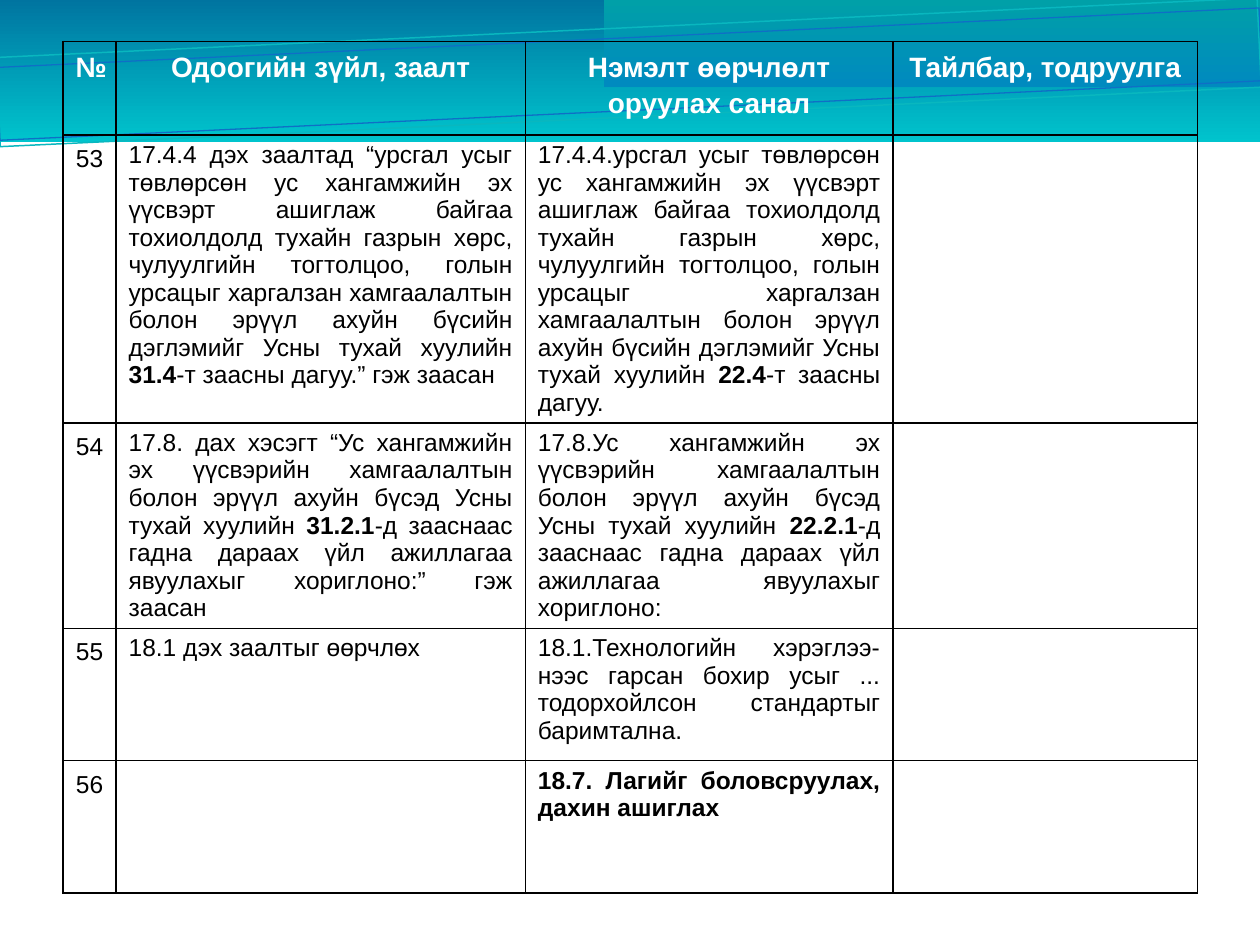
from lxml import etree
from pptx import Presentation
from pptx.dml.color import RGBColor
from pptx.enum import shapes, text
from pptx.oxml import ns
from pptx.util import Cm, Pt

COLORS = {
    "white": "FFFFFF", "black": "000000",
    "band_top": "0074A0", "band_bottom": "00C4CD",
    "panel_bottom": "008ABF", "panel_top": "00A0A8",
    "teal_line": "09B7BF", "blue_line": "0F6FC6",
}
FONT = "Arial"
CENTER, JUSTIFY = text.PP_ALIGN.CENTER, text.PP_ALIGN.JUSTIFY


def color(name):
    return RGBColor.from_string(COLORS[name])


def draw_borders(cell):
    """Add a thin black line on every side of a table cell."""
    properties = cell._tc.get_or_add_tcPr()
    for side in ("a:lnL", "a:lnR", "a:lnT", "a:lnB"):
        line = etree.SubElement(properties, ns.qn(side), w=str(Pt(1)))
        fill = etree.SubElement(line, ns.qn("a:solidFill"))
        etree.SubElement(fill, ns.qn("a:srgbClr"), val=COLORS["black"])


presentation = Presentation()
presentation.slide_width, presentation.slide_height = Cm(25.4), Cm(19.05)
slide = presentation.slides.add_slide(presentation.slide_layouts[6])

# Gradient bands: left, top, width, height, first colour, last colour, angle
bands = [
    (-0.03, -0.03, 25.45, 2.9, "band_top", "band_bottom", 270),
    (12.17, -0.03, 13.23, 1.78, "panel_bottom", "panel_top", 90),
]
for *box, first, last, angle in bands:
    shape = slide.shapes.add_shape(shapes.MSO_SHAPE.RECTANGLE, *map(Cm, box))
    shape.shadow.inherit = False
    shape.line.fill.background()
    shape.fill.gradient()
    shape.fill.gradient_angle = angle
    for stop, name, position in zip(shape.fill.gradient_stops, (first, last), (0, 1)):
        stop.color.rgb = color(name)
        stop.position = position

# Tilted outlines: left, top, width, height, line colour, line width
outlines = [
    (-0.05, 0.56, 25.45, 1.8, "teal_line", 0.85),
    (-0.05, 0.76, 25.48, 1.47, "blue_line", 0.75),
]
for *box, name, width in outlines:
    shape = slide.shapes.add_shape(shapes.MSO_SHAPE.RECTANGLE, *map(Cm, box))
    shape.shadow.inherit = False
    shape.rotation = 357.3
    shape.fill.background()
    shape.line.color.rgb = color(name)
    shape.line.width = Pt(width)

# Each cell is a list of runs; every second run is bold
rows = [
    [["№"], ["Одоогийн зүйл, заалт"], ["Нэмэлт өөрчлөлт оруулах санал"], ["Тайлбар, тодруулга"]],
    [
        ["53"],
        ["17.4.4 дэх заалтад “урсгал усыг төвлөрсөн ус хангамжийн эх үүсвэрт ашиглаж байгаа "
         "тохиолдолд тухайн газрын хөрс, чулуулгийн тогтолцоо, голын урсацыг харгалзан "
         "хамгаалалтын болон эрүүл ахуйн бүсийн дэглэмийг Усны тухай хуулийн ",
         "31.4", "-т заасны дагуу.” гэж заасан"],
        ["17.4.4.урсгал усыг төвлөрсөн ус хангамжийн эх үүсвэрт ашиглаж байгаа "
         "тохиолдолд тухайн газрын хөрс, чулуулгийн тогтолцоо, голын урсацыг харгалзан "
         "хамгаалалтын болон эрүүл ахуйн бүсийн дэглэмийг Усны тухай хуулийн ",
         "22.4", "-т заасны дагуу."],
        [],
    ],
    [
        ["54"],
        ["17.8. дах хэсэгт “Ус хангамжийн эх үүсвэрийн хамгаалалтын болон эрүүл ахуйн "
         "бүсэд Усны тухай хуулийн ",
         "31.2.1", "-д зааснаас гадна дараах үйл ажиллагаа явуулахыг хориглоно:” гэж заасан"],
        ["17.8.Ус хангамжийн эх үүсвэрийн хамгаалалтын болон эрүүл ахуйн "
         "бүсэд Усны тухай хуулийн ",
         "22.2.1", "-д зааснаас гадна дараах үйл ажиллагаа явуулахыг хориглоно:"],
        [],
    ],
    [
        ["55"],
        ["18.1 дэх заалтыг өөрчлөх"],
        ["18.1.Технологийн хэрэглээ-нээс гарсан бохир усыг ... тодорхойлсон стандартыг "
         "баримтална."],
        [],
    ],
    [["56"], [], ["", "18.7. Лагийг боловсруулах, дахин ашиглах "], []],
]
column_widths = [1.07, 8.25, 7.41, 6.14]
row_heights = [1.88, 5.79, 4.06, 2.67, 2.67]

table = slide.shapes.add_table(
    len(rows), len(column_widths), Cm(1.27), Cm(0.84),
    Cm(sum(column_widths)), Cm(sum(row_heights))).table
table.horz_banding = False
for column, width in zip(table.columns, column_widths):
    column.width = Cm(width)
for row, height in zip(table.rows, row_heights):
    row.height = Cm(height)

for row_index, row in enumerate(rows):
    is_header = row_index == 0
    for column_index, runs in enumerate(row):
        cell = table.cell(row_index, column_index)
        draw_borders(cell)
        cell.fill.background()
        paragraph = cell.text_frame.paragraphs[0]
        if is_header or column_index == 0:
            paragraph.alignment = CENTER
            paragraph.line_spacing = 1.15
        else:
            paragraph.alignment = JUSTIFY
        for run_index, words in enumerate(runs):
            if not words:
                continue
            run = paragraph.add_run()
            run.text = words
            run.font.name = FONT
            run.font.size = Pt(16 if is_header else 14)
            run.font.bold = is_header or run_index % 2 == 1
            run.font.color.rgb = color("white" if is_header else "black")

presentation.save("out.pptx")
